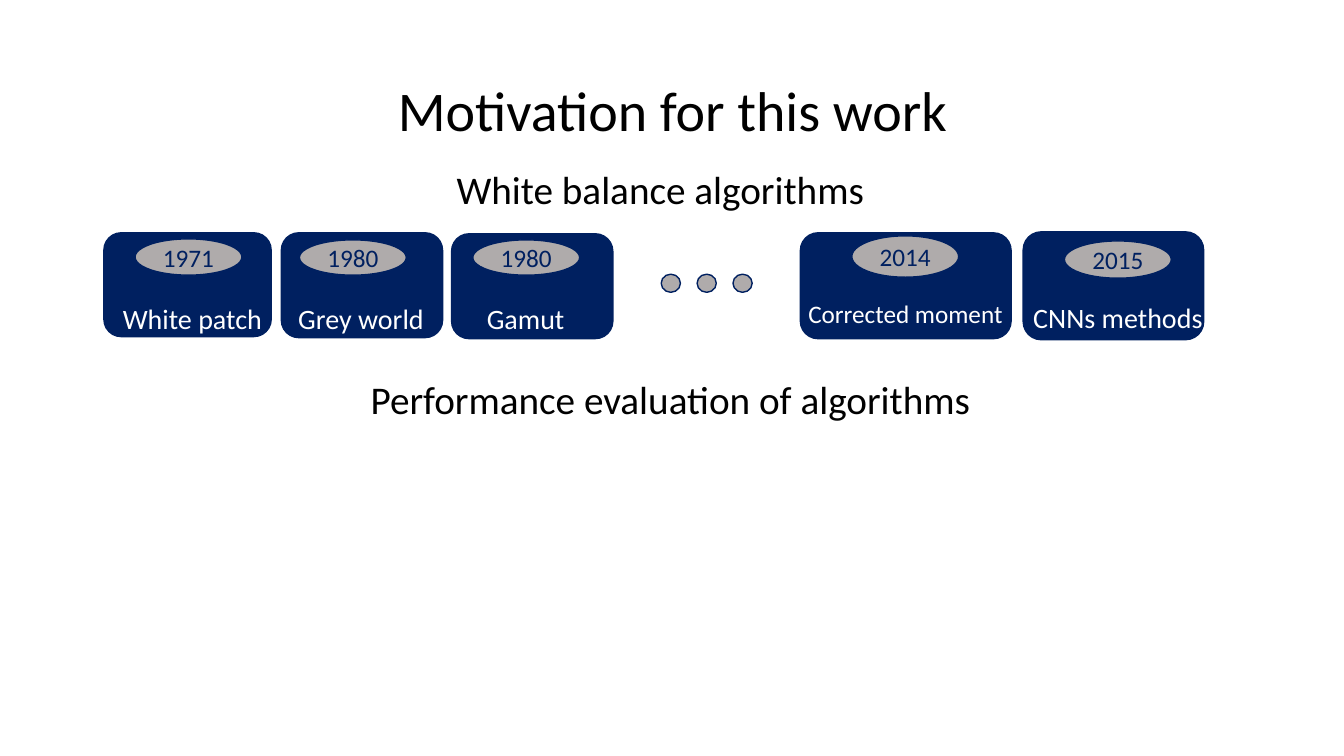
from pptx import Presentation
from pptx.dml.color import RGBColor
from pptx.enum.shapes import MSO_SHAPE
from pptx.enum.text import MSO_ANCHOR, PP_ALIGN
from pptx.util import Inches, Pt

WIDE, HIGH = Inches(13.33), Inches(7.5)
COL, ROW = WIDE / 100, HIGH / 100
NAVY = RGBColor(0x00, 0x20, 0x60)
GREY = RGBColor(0xAF, 0xAB, 0xAB)
BLACK = RGBColor(0, 0, 0)
WHITE = RGBColor(255, 255, 255)
LEFT, MID = PP_ALIGN.LEFT, PP_ALIGN.CENTER
OVAL_W = 7.95
LABEL_H = 5.87

# year, oval (x, y, h), card (x, y, w, h), name, label (x, y, w), size, align
CARDS = [
    ("1971", (10.05, 31.6, 4.8), (7.73, 30.8, 12.45, 13.73),
     "White patch", (8.4, 39.2, 13.35), 20, LEFT),
    ("1980", (22.28, 31.73, 4.67), (20.93, 30.8, 12, 13.87),
     "Grey world", (21.45, 39.2, 11.25), 20, LEFT),
    ("1980", (35.18, 31.73, 4.67), (33.6, 30.93, 12, 13.87),
     "Gamut", (35.48, 39.2, 7.73), 20, LEFT),
    ("2014", (63.38, 31.2, 5.47), (59.55, 30.8, 15.68, 14),
     "Corrected moment", (59.4, 38.8, 16.43), 18, LEFT),
    ("2015", (79.2, 31.87, 4.93), (76.13, 30.67, 13.43, 14.27),
     "CNNs methods", (74.63, 39.07, 17.1), 20, MID),
]


def area(x, y, w, h):
    return round(x * COL), round(y * ROW), round(w * COL), round(h * ROW)


def write(shape, text, size, color, align=MID):
    frame = shape.text_frame
    frame.text = text
    frame.word_wrap = True
    para = frame.paragraphs[0]
    para.alignment = align
    font = para.runs[0].font
    font.name, font.size = "Calibri", Pt(size)
    font.color.rgb = color
    return para


def shape_at(shapes, kind, box, fill):
    shape = shapes.add_shape(kind, *area(*box))
    shape.shadow.inherit = False
    shape.fill.solid()
    shape.fill.fore_color.rgb = fill
    shape.line.color.rgb = NAVY
    shape.line.width = Pt(1)
    return shape


def title(slide, text):
    head = slide.shapes.title
    head.left, head.top, head.width, head.height = area(6.9, 5.33, 86.25, 19.33)
    write(head, text, 40, BLACK).line_spacing = 0.9
    head.text_frame.vertical_anchor = MSO_ANCHOR.MIDDLE


def heading(slide, text, x, y):
    box = slide.shapes.add_textbox(*area(x, y, 86.25, 4.93))
    write(box, text, 28, BLACK).line_spacing = 0.9


def card(slide, year, oval, box, name, label, size, align):
    shapes = slide.shapes.add_group_shape().shapes
    shape_at(shapes, MSO_SHAPE.ROUNDED_RECTANGLE, box, NAVY)
    text = shapes.add_textbox(*area(*label, LABEL_H))
    write(text, name, size, WHITE, align)
    x, y, h = oval
    badge = shape_at(shapes, MSO_SHAPE.OVAL, (x, y, OVAL_W, h), GREY)
    write(badge, year, 18, NAVY)
    frame = badge.text_frame
    frame.vertical_anchor = MSO_ANCHOR.MIDDLE
    frame.margin_left = frame.margin_right = 0


def dots(slide):
    shapes = slide.shapes.add_group_shape().shapes
    for i in range(3):
        shape_at(shapes, MSO_SHAPE.OVAL, (49.2 + 2.67 * i, 36.27, 1.43, 2.4), GREY)


def main():
    deck = Presentation()
    deck.slide_width, deck.slide_height = WIDE, HIGH
    slide = deck.slides.add_slide(deck.slide_layouts[5])
    title(slide, "Motivation for this work")
    heading(slide, "White balance algorithms", 6, 21.87)
    for item in CARDS:
        card(slide, *item)
    dots(slide)
    heading(slide, "Performance evaluation of algorithms", 6.75, 49.73)
    deck.save("out.pptx")


if __name__ == "__main__":
    main()
